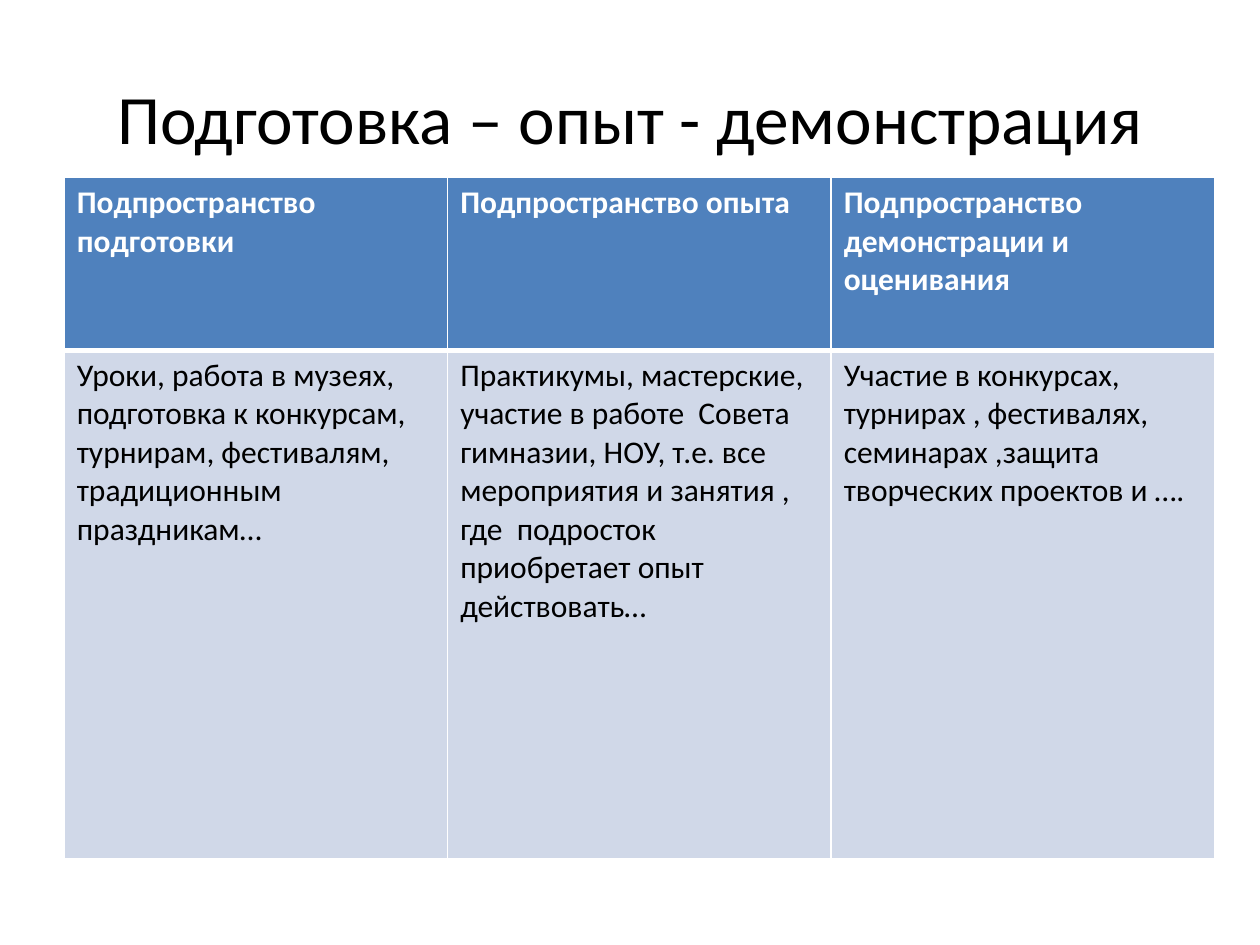
import pptx
import pptx.dml.color
import pptx.enum.text
import pptx.oxml
import pptx.oxml.ns
import pptx.util
from pptx.util import Inches

TITLE = "Подготовка – опыт - демонстрация"
HEADERS = [
    "Подпространство  подготовки",
    "Подпространство опыта",
    "Подпространство демонстрации и оценивания",
]
ACTIVITIES = [
    "Уроки, работа в музеях, подготовка к конкурсам, турнирам, фестивалям, "
    "традиционным праздникам…",
    "Практикумы, мастерские, участие в работе  Совета гимназии, НОУ, т.е. все "
    "мероприятия и занятия , где  подросток приобретает опыт действовать…",
    "Участие в конкурсах, турнирах , фестивалях, семинарах ,защита "
    "творческих проектов и ….",
]


def rgb(color):
    return pptx.dml.color.RGBColor.from_string(color)


def put_text(tf, text, size=18, color="000000", bold=False, align="LEFT", anchor="TOP"):
    tf.word_wrap = True
    tf.vertical_anchor = pptx.enum.text.MSO_ANCHOR[anchor]
    p = tf.paragraphs[0]
    p.alignment = pptx.enum.text.PP_ALIGN[align]
    r = p.add_run()
    r.text = text
    r.font.name = "Calibri"
    r.font.size = pptx.util.Pt(size)
    r.font.bold = bold
    r.font.color.rgb = rgb(color)


def set_borders(cell, color, **widths):
    tc_pr = cell._tc.get_or_add_tcPr()
    for side in "LRTB":
        width = pptx.util.Pt(widths.get(side, 1))
        tc_pr.append(pptx.oxml.parse_xml(
            f'<a:ln{side} {pptx.oxml.ns.nsdecls("a")} w="{width}"><a:solidFill>'
            f'<a:srgbClr val="{color}"/></a:solidFill></a:ln{side}>'
        ))


def add_title(s, left, top, width, height):
    sp = s.shapes.title
    sp.left, sp.top, sp.width, sp.height = left, top, width, height
    put_text(sp.text_frame, TITLE, size=39.6, align="CENTER", anchor="MIDDLE")


def add_spaces_table(s, left, top, width, height):
    table = s.shapes.add_table(2, len(HEADERS), left, top, width, height).table
    header_height = Inches(1.37)
    table.rows[0].height = header_height
    table.rows[1].height = height - header_height
    rows = [
        (HEADERS, "4F81BD", {"color": "FFFFFF", "bold": True}, {"B": 3}),
        (ACTIVITIES, "D0D8E8", {}, {"T": 3}),
    ]
    for i, (texts, fill, style, widths) in enumerate(rows):
        for j, text in enumerate(texts):
            cell = table.cell(i, j)
            set_borders(cell, "FFFFFF", **widths)
            cell.fill.solid()
            cell.fill.fore_color.rgb = rgb(fill)
            put_text(cell.text_frame, text, **style)


def main():
    prs = pptx.Presentation()
    prs.slide_width, prs.slide_height = Inches(10), Inches(7.5)
    s = prs.slides.add_slide(prs.slide_layouts[5])
    add_title(s, Inches(0.5), Inches(0.3), Inches(9), Inches(1.25))
    add_spaces_table(s, Inches(0.51), Inches(1.41), Inches(9.13), Inches(5.41))
    prs.save("out.pptx")


if __name__ == "__main__":
    main()
